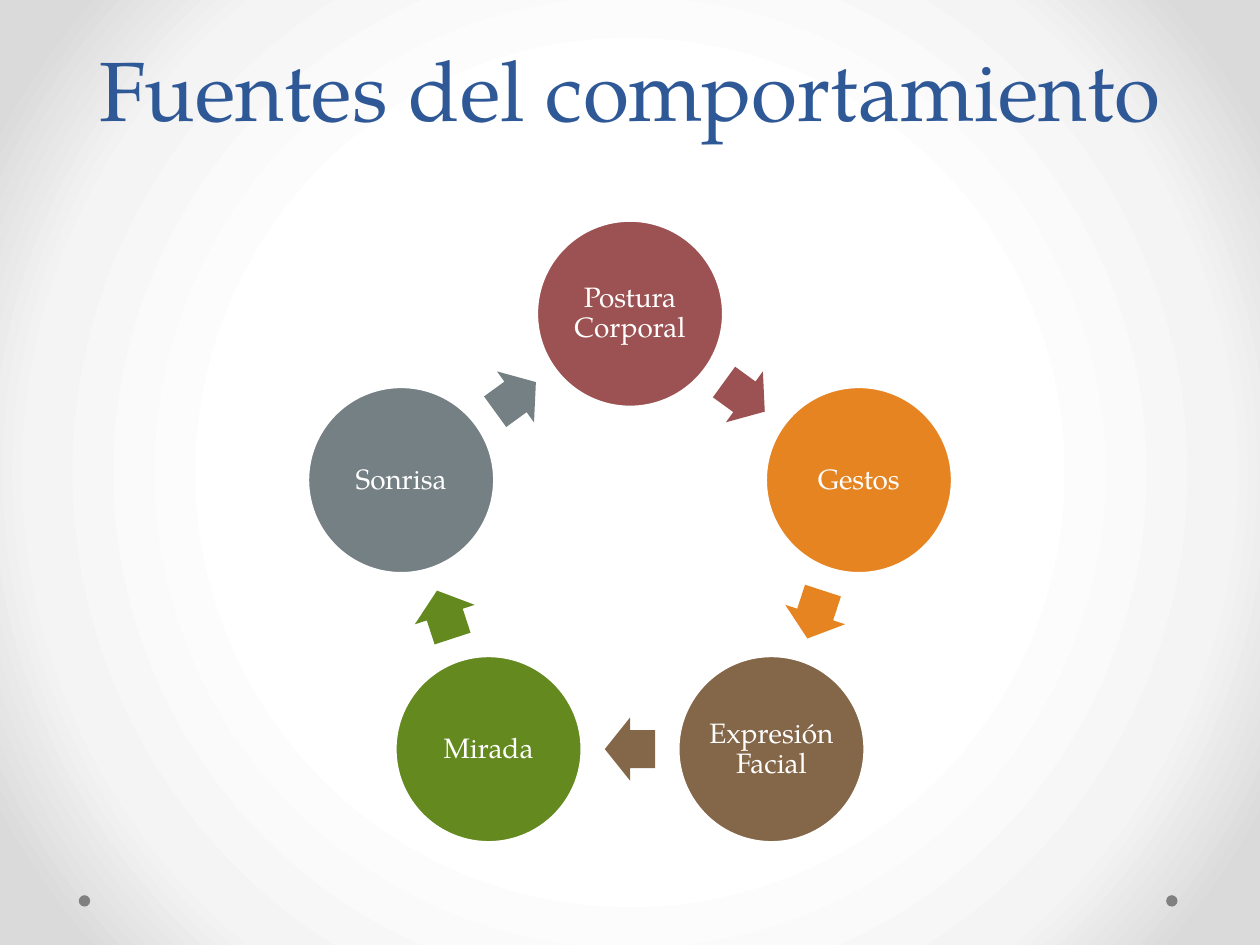
from math import cos, radians, sin

from pptx import Presentation
from pptx.dml.color import RGBColor
from pptx.enum.shapes import MSO_SHAPE as Shape
from pptx.enum.text import MSO_ANCHOR as Anchor, MSO_AUTO_SIZE as AutoSize, PP_ALIGN as Align
from pptx.oxml import parse_xml
from pptx.oxml.ns import nsdecls
from pptx.util import Inches, Pt

COLORS = {
    "title": "2F5897", "white": "FFFFFF", "pale": "F4F4F4", "edge": "DADADA",
    "dot": "808080", "red": "9C5252", "orange": "E68422", "brown": "846648",
    "green": "63891F", "slate": "758085",
}
FONT = "TeX Gyre Pagella"
SOURCES = [
    ("Postura Corporal", "red"),
    ("Gestos", "orange"),
    ("Expresión Facial", "brown"),
    ("Mirada", "green"),
    ("Sonrisa", "slate"),
]


def write_text(holder, text, size, color, spacing, anchor, inset):
    frame = holder.text_frame
    frame.text = text
    frame.word_wrap = True
    frame.auto_size = AutoSize.NONE
    frame.vertical_anchor = anchor
    frame.margin_left = frame.margin_right = Inches(inset)
    frame.margin_top = frame.margin_bottom = Inches(min(inset, 0.05))
    paragraph = frame.paragraphs[0]
    paragraph.alignment = Align.CENTER
    paragraph.line_spacing = spacing
    font = paragraph.runs[0].font
    font.name, font.size = FONT, Pt(size)
    font.color.rgb = RGBColor.from_string(COLORS[color])


def add_centered(preset, x, y, width, height, color):
    shape = slide.shapes.add_shape(
        preset, Inches(x - width / 2), Inches(y - height / 2), Inches(width), Inches(height))
    shape.shadow.inherit = False
    shape.fill.solid()
    shape.fill.fore_color.rgb = RGBColor.from_string(COLORS[color])
    shape.line.fill.background()
    return shape


deck = Presentation()
deck.slide_width, deck.slide_height = Inches(10), Inches(7.5)
slide = deck.slides.add_slide(deck.slide_layouts[5])

slide.background.fill.solid()
backdrop = slide.element.xpath(".//p:bgPr")[0]
stops = "".join(
    f'<a:gs pos="{percent * 1000}"><a:srgbClr val="{COLORS[color]}"/></a:gs>'
    for percent, color in [(50, "white"), (76, "pale"), (92, "edge")])
backdrop.replace(backdrop[0], parse_xml(
    f'<a:gradFill {nsdecls("a")} rotWithShape="1"><a:gsLst>{stops}</a:gsLst>'
    '<a:path path="circle"><a:fillToRect l="50000" t="50000" r="50000" b="50000"/></a:path>'
    '</a:gradFill>'))

for dot_x in (0.67, 9.3):
    add_centered(Shape.OVAL, dot_x, 7.15, 0.09, 0.09, "dot")

heading = slide.shapes.title
heading.left, heading.top = Inches(0.5), Inches(0)
heading.width, heading.height = Inches(9), Inches(1.15)
write_text(heading, "Fuentes del comportamiento", size=48, color="title",
           spacing=Pt(58), anchor=Anchor.BOTTOM, inset=0.1)

center_x, center_y, radius, diameter = 5, 4.4, 1.91, 1.49
step = 360 / len(SOURCES)
arrow_radius = radius * cos(radians(step / 2))

for index, (source, color) in enumerate(SOURCES):
    angle = radians(index * step)
    circle = add_centered(Shape.OVAL, center_x + radius * sin(angle),
                          center_y - radius * cos(angle), diameter, diameter, color)
    circle.line.color.rgb = RGBColor.from_string(COLORS["white"])
    circle.line.width = Pt(2.25)
    write_text(circle, source, size=16, color="white",
               spacing=0.9, anchor=Anchor.MIDDLE, inset=0.02)

    turn = (index + 0.5) * step
    arrow = add_centered(Shape.RIGHT_ARROW, center_x + arrow_radius * sin(radians(turn)),
                         center_y - arrow_radius * cos(radians(turn)), 0.4, 0.5, color)
    arrow.adjustments[0], arrow.adjustments[1] = 0.6, 0.5
    arrow.rotation = turn

deck.save("out.pptx")
